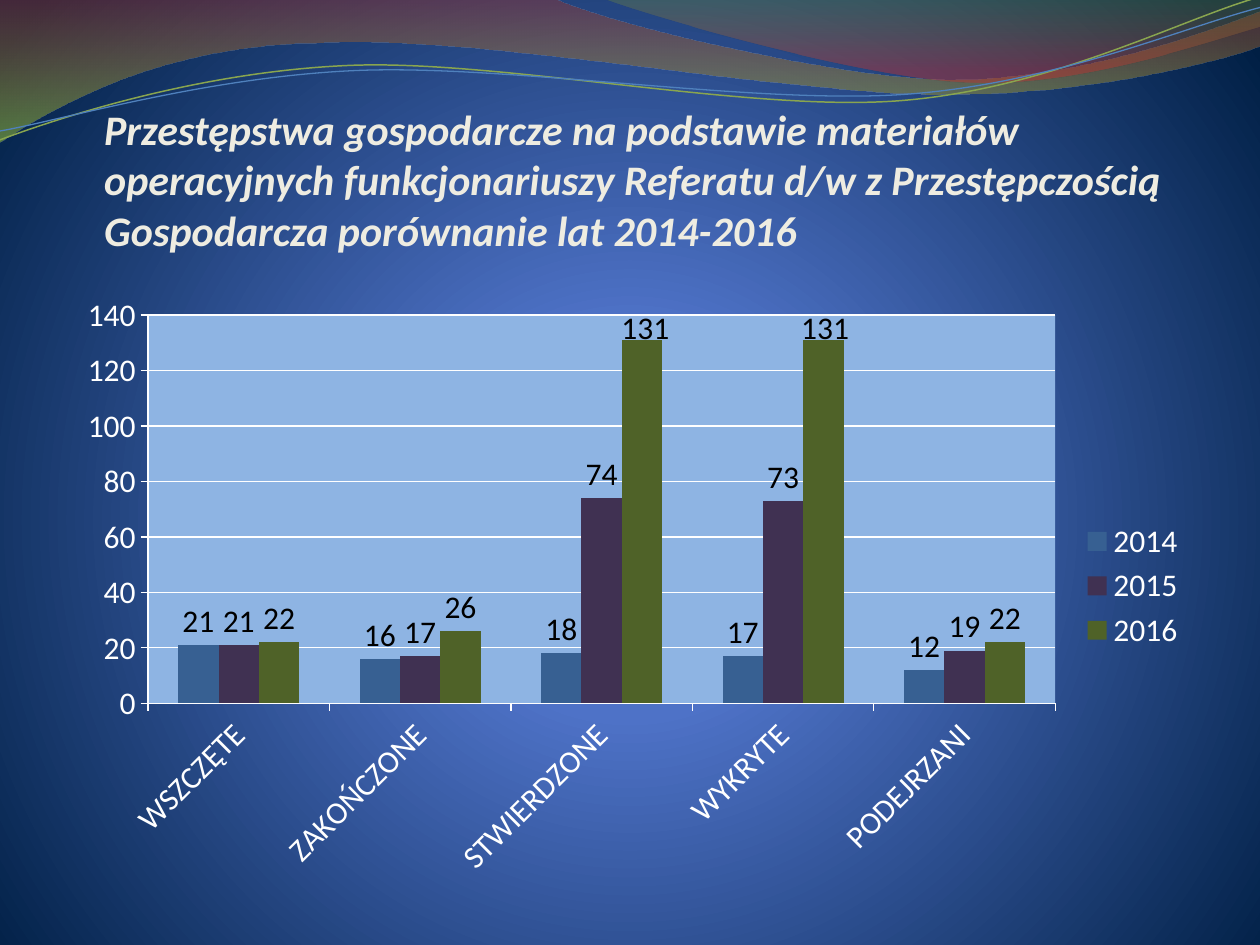
from dataclasses import dataclass
from math import cos, radians, sin
from typing import Optional

from lxml import etree
from pptx import Presentation
from pptx.chart.data import CategoryChartData
from pptx.dml.color import RGBColor
from pptx.enum.chart import XL_CHART_TYPE, XL_LABEL_POSITION, XL_LEGEND_POSITION, XL_TICK_MARK
from pptx.enum.text import MSO_ANCHOR, PP_ALIGN
from pptx.oxml import parse_xml
from pptx.oxml.ns import nsdecls, qn
from pptx.util import Pt

COLUMNS = XL_CHART_TYPE.COLUMN_CLUSTERED
LABEL_ABOVE = XL_LABEL_POSITION.OUTSIDE_END
LEGEND_RIGHT = XL_LEGEND_POSITION.RIGHT
TICK_OUTSIDE = XL_TICK_MARK.OUTSIDE
ANCHOR_BOTTOM = MSO_ANCHOR.BOTTOM
ALIGN_LEFT = PP_ALIGN.LEFT


@dataclass(frozen=True)
class Theme:
    font: str = "Calibri"
    title_size: int = 24
    chart_size: int = 18
    title_color: str = "EEECE1"
    chart_text: str = "FFFFFF"
    label_text: str = "000000"
    plot_fill: str = "8EB4E3"
    background: tuple = ((0, "4D75D6", 100), (25, "4E72C7", 100), (100, "001F44", 100))


@dataclass(frozen=True)
class Box:
    left: float
    top: float
    width: float
    height: float


@dataclass(frozen=True)
class Wave:
    start: tuple
    segments: tuple
    gradient: tuple = ()
    line_color: Optional[str] = None
    line_width: float = 0
    tilt: float = 0
    center: tuple = (0, 0)


@dataclass(frozen=True)
class YearSeries:
    name: str
    values: tuple
    color: str
    label_shifts: tuple = ()


THEME = Theme()
CHART = Box(36.7, 162, 648, 345.6)
PLOT = Box(84.6, 180, 518.4, 222)
TITLE = (
    "Przestępstwa gospodarcze na podstawie materiałów operacyjnych funkcjonariuszy "
    "Referatu d/w z Przestępczością Gospodarcza porównanie lat 2014-2016"
)
CATEGORIES = ("WSZCZĘTE", "ZAKOŃCZONE", "STWIERDZONE", "WYKRYTE", "PODEJRZANI")
YEARS = (
    YearSeries("2014", (21, 16, 18, 17, 12), "376092"),
    YearSeries("2015", (21, 17, 74, 73, 19), "403152"),
    YearSeries("2016", (22, 26, 131, 131, 22), "4F6228", ((2, 2, 7), (3, 1, 7))),
)
WAVES = (
    Wave(
        (0, -0.7),
        (
            (316.8, -0.7),
            (342.7, 12.2, 478.1, 45.4, 545.8, 45.4),
            (614.2, 45.4, 689.8, 18.7, 720, 6.5),
            (720.7, 25.9),
            (707.8, 31.7, 626.4, 54.7, 537.1, 54),
            (447.8, 54, 275, 20.2, 185, 24.5),
            (92.9, 25.2, 33.1, 59.8, -0.7, 81.4),
            (0, -0.7),
        ),
        gradient=((0, "973330", 45), (100, "95C238", 55)),
    ),
    Wave(
        (344.9, -0.7),
        (
            (366.5, 7.9, 491, 44.6, 553.7, 46.8),
            (616.3, 49.7, 691.9, 23, 720, 15.1),
            (720, 0),
            (344.9, -0.7),
        ),
        gradient=((0, "769537", 30), (80, "BE3330", 45)),
    ),
    Wave(
        (0, 79.9),
        (
            (34.6, 67, 113.8, 41, 199.4, 37.4),
            (284.4, 33.8, 427, 64.1, 513.4, 57.6),
            (599.8, 51.1, 675.4, 10.8, 718.6, -1.4),
        ),
        line_color="89A54F", line_width=0.85, tilt=2.7, center=(359.3, 41.4),
    ),
    Wave(
        (0, 74.9),
        (
            (33.8, 69.1, 118.1, 43.9, 203.8, 40.3),
            (290.2, 36.7, 429.8, 59.8, 516.2, 54),
            (601.9, 48.2, 677.5, 15.1, 720, 4.3),
        ),
        line_color="4F81BD", line_width=0.75, tilt=2.7, center=(359.6, 42.5),
    ),
)


def apply_format(target, values: dict) -> None:
    for name, value in values.items():
        setattr(target, name, value)


def gradient_xml(stops: tuple, direction: str):
    stop_xml = "".join(
        f'<a:gs pos="{position * 1000}"><a:srgbClr val="{color}">'
        f'<a:alpha val="{opacity * 1000}"/></a:srgbClr></a:gs>'
        for position, color, opacity in stops
    )
    return parse_xml(
        f'<a:gradFill {nsdecls("a")} rotWithShape="1"><a:gsLst>{stop_xml}</a:gsLst>{direction}</a:gradFill>'
    )


def paint_background(slide) -> None:
    slide.background.fill.solid()
    direction = '<a:path path="circle"><a:fillToRect l="10000" t="110000" r="10000" b="100000"/></a:path>'
    properties = slide.background._cSld.bg.bgPr
    properties.replace(properties[0], gradient_xml(THEME.background, direction))


def level_point(wave: Wave, x: float, y: float) -> tuple:
    angle = radians(wave.tilt)
    across, down = x - wave.center[0], y - wave.center[1]
    return (
        Pt(wave.center[0] + across * cos(angle) - down * sin(angle)),
        Pt(wave.center[1] + across * sin(angle) + down * cos(angle)),
    )


def bend_segments(shape, segments: tuple) -> None:
    lines = iter(list(shape._element.iter(qn("a:lnTo"))))
    for segment in segments:
        first = next(lines)
        if len(segment) == 6:
            first.tag = qn("a:cubicBezTo")
            for line in (next(lines), next(lines)):
                first.append(line[0])
                line.getparent().remove(line)


def draw_wave(slide, wave: Wave) -> None:
    numbers = wave.start + sum(wave.segments, ())
    vertices = [level_point(wave, x, y) for x, y in zip(numbers[::2], numbers[1::2])]
    builder = slide.shapes.build_freeform(*vertices[0])
    builder.add_line_segments(vertices[1:], close=bool(wave.gradient))
    shape = builder.convert_to_shape()
    bend_segments(shape, wave.segments)
    shape.rotation = -wave.tilt % 360
    shape.shadow.inherit = False
    shape.fill.background()
    if wave.gradient:
        shape.line.fill.background()
        properties = shape._element.spPr
        direction = '<a:lin ang="5400000" scaled="1"/>'
        properties.replace(properties.find(qn("a:noFill")), gradient_xml(wave.gradient, direction))
    else:
        shape.line.color.rgb = RGBColor.from_string(wave.line_color)
        shape.line.width = Pt(wave.line_width)


def write_title(slide) -> None:
    title = slide.shapes.title
    title._element.getparent().append(title._element)
    apply_format(title, {"left": Pt(59.5), "top": Pt(32), "width": Pt(624), "height": Pt(113.5)})
    frame = title.text_frame
    frame.text = TITLE
    apply_format(frame, {
        "word_wrap": True, "vertical_anchor": ANCHOR_BOTTOM, "margin_left": 0,
        "margin_top": Pt(3.6), "margin_right": 0, "margin_bottom": 0,
    })
    paragraph = frame.paragraphs[0]
    paragraph.alignment = ALIGN_LEFT
    font = paragraph.runs[0].font
    apply_format(font, {"name": THEME.font, "size": Pt(THEME.title_size), "bold": True, "italic": True})
    font.color.rgb = RGBColor.from_string(THEME.title_color)


def layout_xml(values: dict):
    layout = etree.fromstring(f'<c:layout {nsdecls("c")}><c:manualLayout/></c:layout>')
    for name, value in values.items():
        etree.SubElement(layout[0], qn(f"c:{name}")).set("val", str(value))
    return layout


def style_label_font(font) -> None:
    apply_format(font, {"name": THEME.font, "size": Pt(THEME.chart_size)})
    font.color.rgb = RGBColor.from_string(THEME.label_text)


def style_series(series, year: YearSeries) -> None:
    series.format.fill.solid()
    series.format.fill.fore_color.rgb = RGBColor.from_string(year.color)
    labels = series.data_labels
    apply_format(labels, {"show_value": True, "position": LABEL_ABOVE})
    style_label_font(labels.font)
    for index, right, down in year.label_shifts:
        label = series.points[index].data_label
        label.position = LABEL_ABOVE
        style_label_font(label.font)
        shift = layout_xml({"x": right / CHART.width, "y": down / CHART.height})
        labels._element.findall(qn("c:dLbl"))[-1].insert(1, shift)


def draw_chart(slide) -> None:
    data = CategoryChartData()
    data.categories = CATEGORIES
    for year in YEARS:
        data.add_series(year.name, year.values)
    bounds = (Pt(CHART.left), Pt(CHART.top), Pt(CHART.width), Pt(CHART.height))
    chart = slide.shapes.add_chart(COLUMNS, *bounds, data).chart
    white = RGBColor.from_string(THEME.chart_text)
    apply_format(chart.font, {"name": THEME.font, "size": Pt(THEME.chart_size)})
    chart.font.color.rgb = white
    apply_format(chart, {"has_title": False, "has_legend": True})
    apply_format(chart.legend, {"position": LEGEND_RIGHT, "include_in_layout": False})
    plot = chart.plots[0]
    apply_format(plot, {"gap_width": 150, "overlap": 0, "vary_by_categories": False})
    for series, year in zip(plot.series, YEARS):
        style_series(series, year)
    apply_format(chart.value_axis, {"minimum_scale": 0, "maximum_scale": 140, "major_unit": 20})
    for axis in (chart.category_axis, chart.value_axis):
        axis.major_tick_mark = TICK_OUTSIDE
        axis.format.line.color.rgb = white
    chart.value_axis.major_gridlines.format.line.color.rgb = white
    chart.category_axis.tick_labels.font.size = Pt(THEME.chart_size)
    chart.category_axis._element.find(f'{qn("c:txPr")}/{qn("a:bodyPr")}').set("rot", "-2700000")
    plot_area = chart._chartSpace.chart.plotArea
    for layout in plot_area.findall(qn("c:layout")):
        plot_area.remove(layout)
    plot_area.insert(0, layout_xml({
        "layoutTarget": "inner", "xMode": "edge", "yMode": "edge",
        "x": (PLOT.left - CHART.left) / CHART.width, "y": (PLOT.top - CHART.top) / CHART.height,
        "w": PLOT.width / CHART.width, "h": PLOT.height / CHART.height,
    }))
    plot_area.append(parse_xml(
        f'<c:spPr {nsdecls("c", "a")}><a:solidFill><a:srgbClr val="{THEME.plot_fill}"/></a:solidFill></c:spPr>'
    ))


def main() -> None:
    presentation = Presentation()
    apply_format(presentation, {"slide_width": Pt(720), "slide_height": Pt(540)})
    slide = presentation.slides.add_slide(presentation.slide_layouts[5])
    paint_background(slide)
    for wave in WAVES:
        draw_wave(slide, wave)
    write_title(slide)
    draw_chart(slide)
    presentation.save("out.pptx")


if __name__ == "__main__":
    main()
